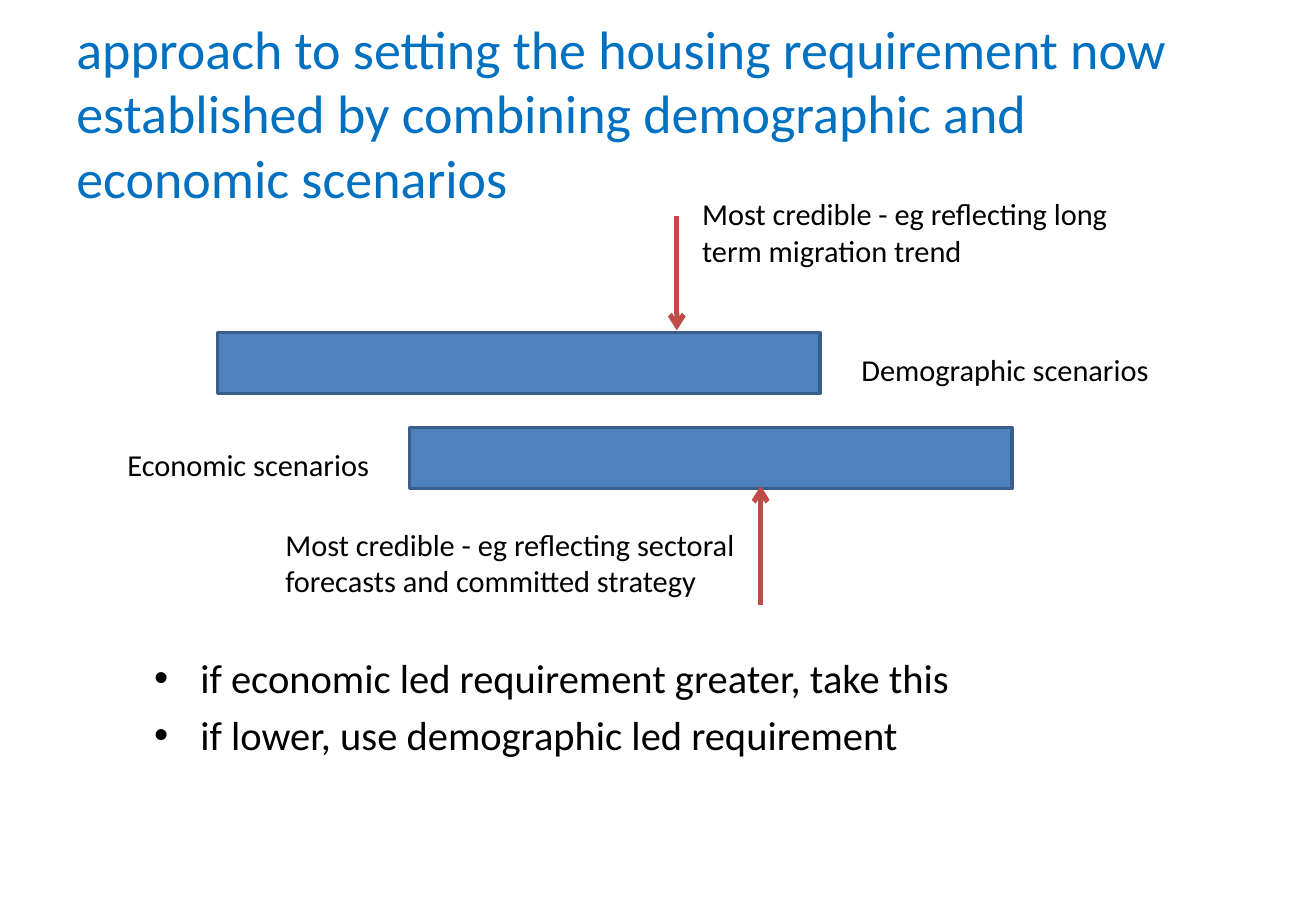
from dataclasses import dataclass

from lxml.etree import SubElement
from pptx import Presentation
from pptx.dml.color import RGBColor
from pptx.enum.shapes import MSO_CONNECTOR, MSO_SHAPE
from pptx.enum.text import MSO_ANCHOR, MSO_AUTO_SIZE
from pptx.oxml.ns import qn
from pptx.slide import Slide
from pptx.text.text import TextFrame
from pptx.util import Emu, Pt

PX = 9144  # 100 px to the inch
FONT = "Calibri"
BLUE, BLACK = "0070C0", "000000"
FILL, EDGE, RED = "4F81BD", "3A5F8C", "BF4C48"
BAR_W, BAR_H = 496, 50
INDENT = 38


@dataclass
class Label:
    text: str
    x: int
    y: int
    w: int
    h: int


@dataclass
class Bar:
    x: int
    y: int


@dataclass
class Arrow:
    x: int
    start: int
    end: int


TITLE = Label(
    "approach to setting the housing requirement now established by "
    "combining demographic and economic scenarios", 53, 30, 929, 125)
RULES = Label(
    "if economic led requirement greater, take this\n"
    "if lower, use demographic led requirement", 117, 533, 866, 200)
LABELS = [
    Label("Demographic scenarios", 699, 284, 291, 40),
    Label("Most credible - eg reflecting long term migration trend",
          568, 156, 394, 71),
    Label("Economic scenarios", 95, 362, 240, 40),
    Label("Most credible - eg reflecting sectoral forecasts and committed "
          "strategy", 225, 428, 427, 71),
]
BARS = [Bar(179, 274), Bar(337, 352)]
ARROWS = [Arrow(557, 178, 272), Arrow(626, 498, 400)]


def px(n: int) -> Emu:
    return Emu(n * PX)


def color(code: str) -> RGBColor:
    return RGBColor.from_string(code)


def add_label(slide: Slide, label: Label, size: int = 18,
              tint: str = BLACK) -> TextFrame:
    box = slide.shapes.add_textbox(
        px(label.x), px(label.y), px(label.w), px(label.h))
    frame = box.text_frame
    frame.text = label.text
    frame.word_wrap = True
    frame.auto_size = MSO_AUTO_SIZE.NONE
    for para in frame.paragraphs:
        for run in para.runs:
            run.font.name = FONT
            run.font.size = Pt(size)
            run.font.color.rgb = color(tint)
    return frame


def add_bullets(frame: TextFrame) -> None:
    for para in frame.paragraphs:
        para.space_before = Pt(4.8)
        props = para._p.get_or_add_pPr()
        props.set("marL", str(px(INDENT)))
        props.set("indent", str(px(-INDENT)))
        SubElement(props, qn("a:buFont"), typeface="Arial")
        SubElement(props, qn("a:buChar"), char="•")


def add_bar(slide: Slide, bar: Bar) -> None:
    shape = slide.shapes.add_shape(
        MSO_SHAPE.RECTANGLE, px(bar.x), px(bar.y), px(BAR_W), px(BAR_H))
    shape.shadow.inherit = False
    shape.fill.solid()
    shape.fill.fore_color.rgb = color(FILL)
    shape.line.color.rgb = color(EDGE)
    shape.line.width = Pt(2)


def add_arrow(slide: Slide, arrow: Arrow) -> None:
    link = slide.shapes.add_connector(
        MSO_CONNECTOR.STRAIGHT, px(arrow.x), px(arrow.start),
        px(arrow.x), px(arrow.end))
    link.line.color.rgb = color(RED)
    link.line.width = Pt(3)
    SubElement(link.line._get_or_add_ln(), qn("a:tailEnd"), type="arrow")
    SubElement(link._element.spPr, qn("a:effectLst"))


def main() -> None:
    deck = Presentation()
    deck.slide_width, deck.slide_height = px(1083), px(750)
    slide = deck.slides.add_slide(deck.slide_layouts[6])

    # Title and decision rules
    title = add_label(slide, TITLE, 32, BLUE)
    title.vertical_anchor = MSO_ANCHOR.MIDDLE
    add_bullets(add_label(slide, RULES, 24))

    # Scenario ranges with their labels
    for bar in BARS:
        add_bar(slide, bar)
    for label in LABELS:
        add_label(slide, label)

    # Most credible points
    for arrow in ARROWS:
        add_arrow(slide, arrow)

    deck.save("out.pptx")


if __name__ == "__main__":
    main()
